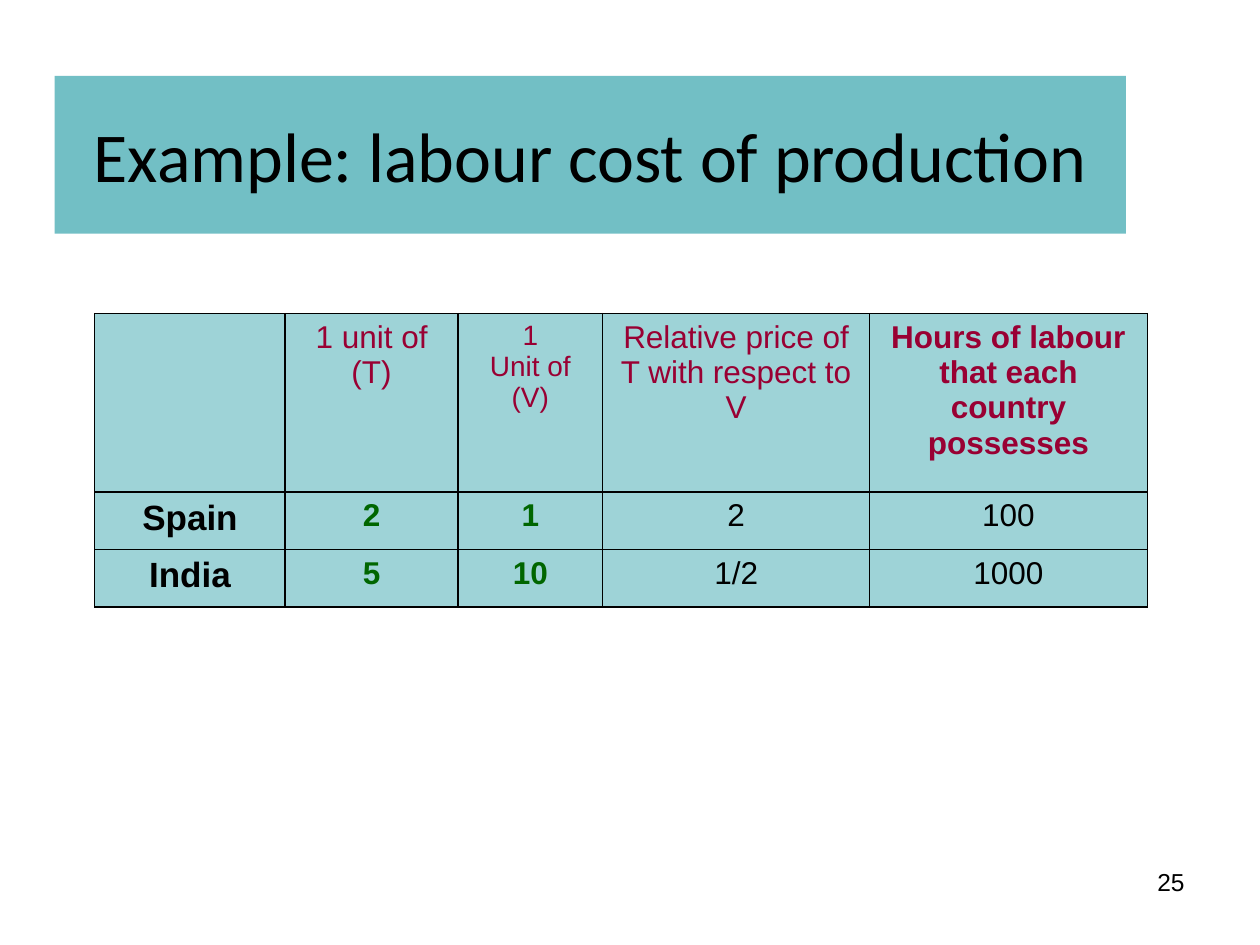
from lxml.etree import SubElement
from pptx import Presentation
from pptx.dml.color import RGBColor
from pptx.enum.shapes import MSO_SHAPE
from pptx.enum.text import MSO_ANCHOR, PP_ALIGN
from pptx.oxml.ns import qn
from pptx.util import Cm, Pt

BLACK, CRIMSON, GREEN = "000000", "990033", "006600"
BANNER, CELL = "72BFC5", "9ED3D7"


def write(frame, text, size, color=BLACK, bold=False, font="Arial", align=PP_ALIGN.CENTER):
    """Write each line of text as its own paragraph."""
    frame.word_wrap = True
    for number, line in enumerate(text.split("\n")):
        paragraph = frame.add_paragraph() if number else frame.paragraphs[0]
        paragraph.alignment = align
        run = paragraph.add_run()
        run.text = line
        run.font.name = font
        run.font.size = Pt(size)
        run.font.bold = bold
        run.font.color.rgb = RGBColor.from_string(color)


def style_cell(cell):
    """Give a cell thin black borders and the table fill."""
    properties = cell._tc.get_or_add_tcPr()
    for side in ("lnL", "lnR", "lnT", "lnB"):
        border = SubElement(properties, qn(f"a:{side}"), w=str(Pt(1)))
        fill = SubElement(border, qn("a:solidFill"))
        SubElement(fill, qn("a:srgbClr"), val=BLACK)
    cell.fill.solid()
    cell.fill.fore_color.rgb = RGBColor.from_string(CELL)


presentation = Presentation()
presentation.slide_width = Cm(25.4)
presentation.slide_height = Cm(19.05)
slide = presentation.slides.add_slide(presentation.slide_layouts[6])

page_number = slide.shapes.add_textbox(Cm(18.2), Cm(17.35), Cm(5.93), Cm(1.32))
write(page_number.text_frame, "25", 14, align=PP_ALIGN.RIGHT)

title = slide.shapes.add_shape(MSO_SHAPE.RECTANGLE, Cm(1.1), Cm(1.53), Cm(21.6), Cm(3.18))
title.shadow.inherit = False
title.fill.solid()
title.fill.fore_color.rgb = RGBColor.from_string(BANNER)
title.line.fill.background()
title.text_frame.vertical_anchor = MSO_ANCHOR.MIDDLE
write(title.text_frame, "Example: labour cost of production", 40, font="Calibri")

# Each entry: text, size, colour, bold
headings = [
    ("", 18, BLACK, False),
    ("1 unit of\n(Τ)", 18, CRIMSON, False),
    ("1\nUnit of\n(V)", 16, CRIMSON, False),
    ("Relative price of T with respect to V", 18, CRIMSON, False),
    ("Hours of labour that each country possesses", 18, CRIMSON, True),
]
country_styles = [
    (20, BLACK, True),
    (18, GREEN, True),
    (18, GREEN, True),
    (18, BLACK, False),
    (18, BLACK, False),
]
countries = [
    ("Spain", "2", "1", "2", "100"),
    ("India", "5", "10", "1/2", "1000"),
]
rows = [headings]
for country in countries:
    rows.append([(text, *style) for text, style in zip(country, country_styles)])

column_widths = [3.84, 3.48, 2.92, 5.38, 5.6]
row_heights = [3.6, 1.16, 1.16]
labour_costs = slide.shapes.add_table(
    len(rows), len(column_widths), Cm(1.91), Cm(6.32),
    Cm(sum(column_widths)), Cm(sum(row_heights)),
).table
for column, width in zip(labour_costs.columns, column_widths):
    column.width = Cm(width)
for row, height in zip(labour_costs.rows, row_heights):
    row.height = Cm(height)

for row, entries in zip(labour_costs.rows, rows):
    for cell, (text, size, color, bold) in zip(row.cells, entries):
        style_cell(cell)
        if text:
            write(cell.text_frame, text, size, color, bold)

presentation.save("out.pptx")
